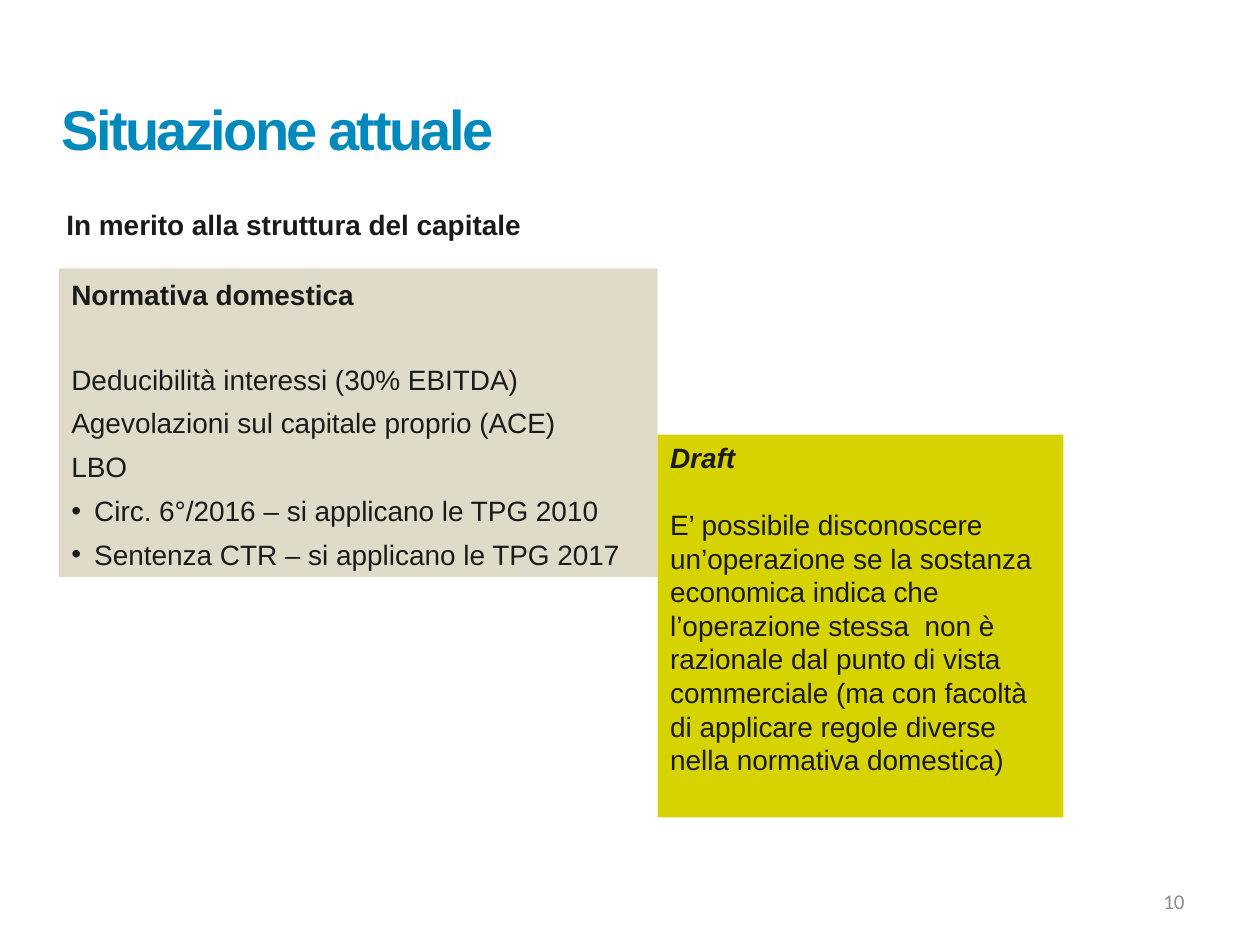
from pptx import Presentation
from pptx import util as u
from pptx.dml.color import RGBColor
from pptx.enum import shapes, text
from pptx.oxml.ns import qn
from lxml import etree

COLORS = {"title": "0089BC", "text": "1A1A1A", "number": "8D8D8D",
          "domestic": "E0DBC8", "draft": "D6D300"}
ALIGN, ANCHOR = text.PP_ALIGN, text.MSO_ANCHOR


def add_box(s, box, fill=None, anchor=ANCHOR.TOP, wrap=True):
    """Add a plain or filled text frame at a (left, top, width, height) box in cm."""
    place = [u.Cm(v) for v in box]
    if fill:
        sp = s.shapes.add_shape(shapes.MSO_SHAPE.RECTANGLE, *place)
        sp.shadow.inherit = False
        sp.fill.solid()
        sp.fill.fore_color.rgb = RGBColor.from_string(COLORS[fill])
        sp.line.fill.background()
    else:
        sp = s.shapes.add_textbox(*place)
    tf = sp.text_frame
    tf.word_wrap = wrap
    tf.vertical_anchor = anchor
    return tf


def add_par(tf, words, size=16, color="text", font="Arial", bold=False, italic=False,
            align=ALIGN.LEFT, spacing=1.0, before=4, bullet=False):
    """Append one paragraph with a single styled run and return the run."""
    first = not tf.paragraphs[0].runs
    p = tf.paragraphs[0] if first else tf.add_paragraph()
    p.alignment = align
    p.line_spacing = spacing
    p.space_before = u.Pt(0 if first else before)
    if bullet:
        pPr = p._p.get_or_add_pPr()
        pPr.set("marL", str(u.Cm(0.46)))
        pPr.set("indent", str(-u.Cm(0.46)))
        etree.SubElement(pPr, qn("a:buFont")).set("typeface", "Arial")
        etree.SubElement(pPr, qn("a:buChar")).set("char", "•")
    r = p.add_run()
    r.text = words
    r.font.name, r.font.size = font, u.Pt(size)
    r.font.bold, r.font.italic = bold, italic
    r.font.color.rgb = RGBColor.from_string(COLORS[color])
    return r


def add_title(s, box, words):
    """Place the slide title with tightened letter spacing."""
    tf = add_box(s, box, anchor=ANCHOR.MIDDLE)
    r = add_par(tf, words, size=32, color="title", bold=True, spacing=0.8)
    r._r.get_or_add_rPr().set("spc", "-150")


def add_subtitle(s, box, words):
    """Place the bold line under the title."""
    tf = add_box(s, box, wrap=False)
    add_par(tf, words, bold=True, align=ALIGN.JUSTIFY, spacing=1.1)


def add_domestic(s, box, heading, lines, bullets):
    """Place the domestic rules panel: heading, plain lines, then bullets."""
    tf = add_box(s, box, fill="domestic")
    style = {"align": ALIGN.JUSTIFY, "spacing": 1.1}
    add_par(tf, heading, bold=True, **style)
    for i, line in enumerate(lines):
        add_par(tf, line, before=4 if i else 27, **style)
    for line in bullets:
        add_par(tf, line, bullet=True, **style)


def add_draft(s, box, heading, body):
    """Place the draft panel: italic heading and body."""
    tf = add_box(s, box, fill="draft")
    add_par(tf, heading, bold=True, italic=True)
    add_par(tf, body, before=19)


def add_number(s, box, number):
    """Place the page number at the right of its box."""
    tf = add_box(s, box, anchor=ANCHOR.MIDDLE)
    add_par(tf, number, size=12, color="number", font="Calibri", align=ALIGN.RIGHT)


def main():
    """Build and save the slide."""
    prs = Presentation()
    prs.slide_width, prs.slide_height = u.Cm(25.4), u.Cm(19.05)
    s = prs.slides.add_slide(prs.slide_layouts[6])
    add_title(s, (0.99, 1.4, 18.14, 2.62), "Situazione attuale")
    add_domestic(s, (1.19, 5.41, 12.07, 6.22), "Normativa domestica",
                 ["Deducibilità interessi (30% EBITDA)",
                  "Agevolazioni sul capitale proprio (ACE)",
                  "LBO"],
                 ["Circ. 6°/2016 – si applicano le TPG 2010",
                  "Sentenza CTR – si applicano le TPG 2017"])
    add_draft(s, (13.26, 8.76, 8.18, 7.72), "Draft",
              "E’ possibile disconoscere un’operazione se la sostanza economica "
              "indica che l’operazione stessa  non è razionale dal punto di vista "
              "commerciale (ma con facoltà di applicare regole diverse nella "
              "normativa domestica)")
    add_subtitle(s, (1.09, 3.99, 9.8, 0.94), "In merito alla struttura del capitale")
    add_number(s, (18.21, 17.65, 5.92, 1.02), "10")
    prs.save("out.pptx")


if __name__ == "__main__":
    main()
